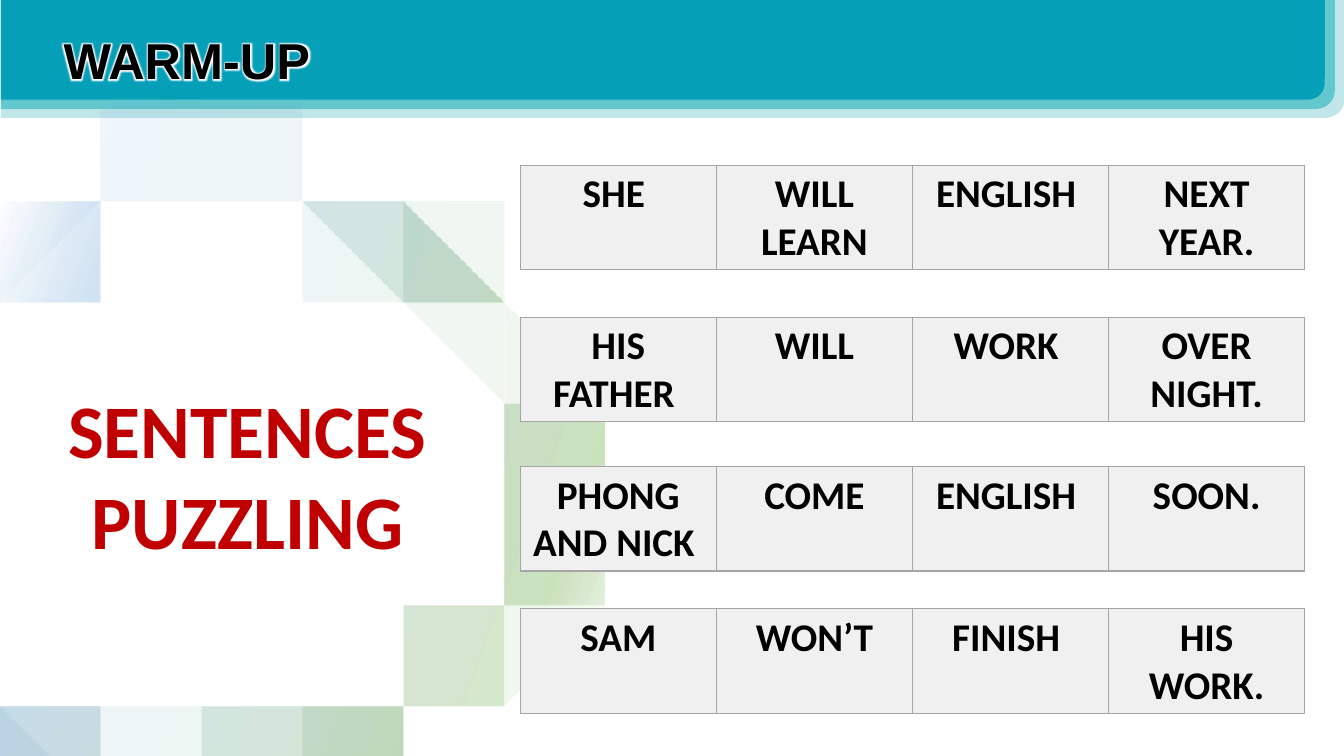
from math import dist

from lxml.etree import SubElement
from pptx import Presentation
from pptx.dml.color import RGBColor
from pptx.enum.shapes import MSO_SHAPE
from pptx.enum.text import MSO_ANCHOR, PP_ALIGN
from pptx.oxml import parse_xml
from pptx.oxml.ns import nsdecls, qn
from pptx.util import Inches, Pt

BANDS = ["C0E6EA", "62C8CE", "05A0B8"]
TABLES = [
    (1.64, ["SHE ", "WILL LEARN", "ENGLISH ", "NEXT YEAR."]),
    (3.15, ["HIS FATHER ", "WILL", "WORK ", "OVER\nNIGHT."]),
    (4.63, ["PHONG AND NICK ", "COME", "ENGLISH ", "SOON."]),
    (6.04, ["SAM", "WON’T", "FINISH ", "HIS WORK."]),
]
STOPS = [(2, "FFFFFF"), (16, "70AD47"), (85, "5B9BD5"), (100, "FFFFFF")]
OUTER = [(0, 2.45), (0.65, 1.94), (2.1, 1.52), (3.1, 1.67), (5.22, 3.27),
         (5.6, 5.94), (3.77, 7.54), (1.3, 8.13), (0, 7.4)]
INNER = [(0, 6.5), (1.45, 7.53), (3.45, 7), (4.65, 6.32), (5, 5.78),
         (5.05, 4.63), (4.67, 3.58), (2.93, 2.25), (0.95, 2.48),
         (0.35, 3.15), (0, 3.7)]
MIDDLE = (2.3, 4.85)
RINGS = [(1, 1.1), (1, 1), (1, 0.96), (1, 1), (1.05, 1.18)]
STEPS = 10


def color(code):
    return RGBColor.from_string(code)


def place(shape, *box):
    shape.left, shape.top, shape.width, shape.height = map(Inches, box)


def write(frame, text, size, font, code, align=PP_ALIGN.CENTER):
    frame.word_wrap = True
    for i, line in enumerate(text.split("\n")):
        para = frame.add_paragraph() if i else frame.paragraphs[0]
        para.alignment = align
        run = para.add_run()
        run.text = line
        run.font.size, run.font.name, run.font.bold = Pt(size), font, True
        run.font.color.rgb = color(code)


def block(slide, kind, box, code):
    shape = slide.shapes.add_shape(kind, *map(Inches, box))
    shape.shadow.inherit = False
    shape.fill.solid()
    shape.fill.fore_color.rgb = color(code)
    shape.line.fill.background()
    return shape


def resize(knots, factor):
    return [(x and MIDDLE[0] + factor * (x - MIDDLE[0]),
             MIDDLE[1] + factor * (y - MIDDLE[1])) for x, y in knots]


def curve(knots):
    last = len(knots) - 1
    slopes = []
    for i, knot in enumerate(knots):
        a, b = knots[max(i - 1, 0)], knots[min(i + 1, last)]
        span = dist(a, knot) + dist(knot, b)
        slopes.append([(b[k] - a[k]) / span for k in (0, 1)])
    points = [knots[0]]
    for i in range(last):
        a, b, size = knots[i], knots[i + 1], dist(knots[i], knots[i + 1])
        for step in range(1, STEPS + 1):
            t = step / STEPS
            ease = t * t * (3 - 2 * t)
            head, tail = t * (1 - t) ** 2, t * t * (t - 1)
            points.append(tuple(
                a[k] + ease * (b[k] - a[k])
                + size * (head * slopes[i][k] + tail * slopes[i + 1][k])
                for k in (0, 1)))
    return [(max(x, 0), y) for x, y in points]


def draw_ring(slide, wide, slim):
    points = curve(resize(OUTER, wide)) + curve(resize(INNER, slim))
    path = slide.shapes.build_freeform(*points[0], scale=Inches(1))
    path.add_line_segments(points[1:], close=True)
    ring = path.convert_to_shape()
    ring.shadow.inherit = False
    ring.line.fill.background()
    stops = "".join(
        f'<a:gs pos="{pos * 1000}"><a:srgbClr val="{code}">'
        '<a:alpha val="10000"/></a:srgbClr></a:gs>' for pos, code in STOPS)
    fill = parse_xml(
        f'<a:gradFill {nsdecls("a")} rotWithShape="1"><a:gsLst>{stops}</a:gsLst>'
        '<a:lin ang="12000000" scaled="0"/></a:gradFill>')
    ring._element.spPr.find(qn("a:custGeom")).addnext(fill)


def draw_table(slide, top, words):
    box = map(Inches, (5.16, top, 7.78, 1.03))
    table = slide.shapes.add_table(1, len(words), *box).table
    table.first_row = table.horz_banding = False
    for cell, text in zip(table.rows[0].cells, words):
        write(cell.text_frame, text, 28, "Calibri", "000000")
        cell.fill.solid()
        cell.fill.fore_color.rgb = color("F0F0F0")
        props = cell._tc.get_or_add_tcPr()
        for i, side in enumerate("LRTB"):
            props.insert(i, parse_xml(
                f'<a:ln{side} {nsdecls("a")} w="12700"><a:solidFill>'
                f'<a:srgbClr val="A5A5A5"/></a:solidFill></a:ln{side}>'))


def main():
    deck = Presentation()
    deck.slide_width, deck.slide_height = Inches(13.33), Inches(7.5)
    slide = deck.slides.add_slide(deck.slide_layouts[5])
    for i, code in enumerate(BANDS):
        box = (0.01, -0.01, 13.33 - 0.1 * i, 1.18 - 0.09 * i)
        band = block(slide, MSO_SHAPE.ROUND_1_RECTANGLE, box, code)
        band._element.spPr.find(qn("a:xfrm")).set("flipV", "1")
    block(slide, MSO_SHAPE.RECTANGLE, (0, 1.18, 13.33, 7.5), "FFFFFF")
    for wide, slim in RINGS:
        draw_ring(slide, wide, slim)

    title = slide.shapes.title
    place(title, 0.53, 0.23, 4.52, 0.71)
    title.text_frame.vertical_anchor = MSO_ANCHOR.MIDDLE
    write(title.text_frame, "WARM-UP", 36, "Arial", "000000", PP_ALIGN.LEFT)
    props = title.text_frame.paragraphs[0].runs[0].font._element
    glow = parse_xml(
        f'<a:effectLst {nsdecls("a")}><a:glow rad="63500"/></a:effectLst>')
    SubElement(glow[0], qn("a:srgbClr")).set("val", "FFFFFF")
    props.find(qn("a:solidFill")).addnext(glow)
    slide.shapes._spTree.append(title._element)

    label = slide.shapes.add_textbox(*map(Inches, (0.52, 3.75, 3.87, 1.92)))
    write(label.text_frame, "SENTENCES PUZZLING", 54, "Calibri", "C00000")
    for top, words in TABLES:
        draw_table(slide, top, words)
    deck.save("out.pptx")


if __name__ == "__main__":
    main()
